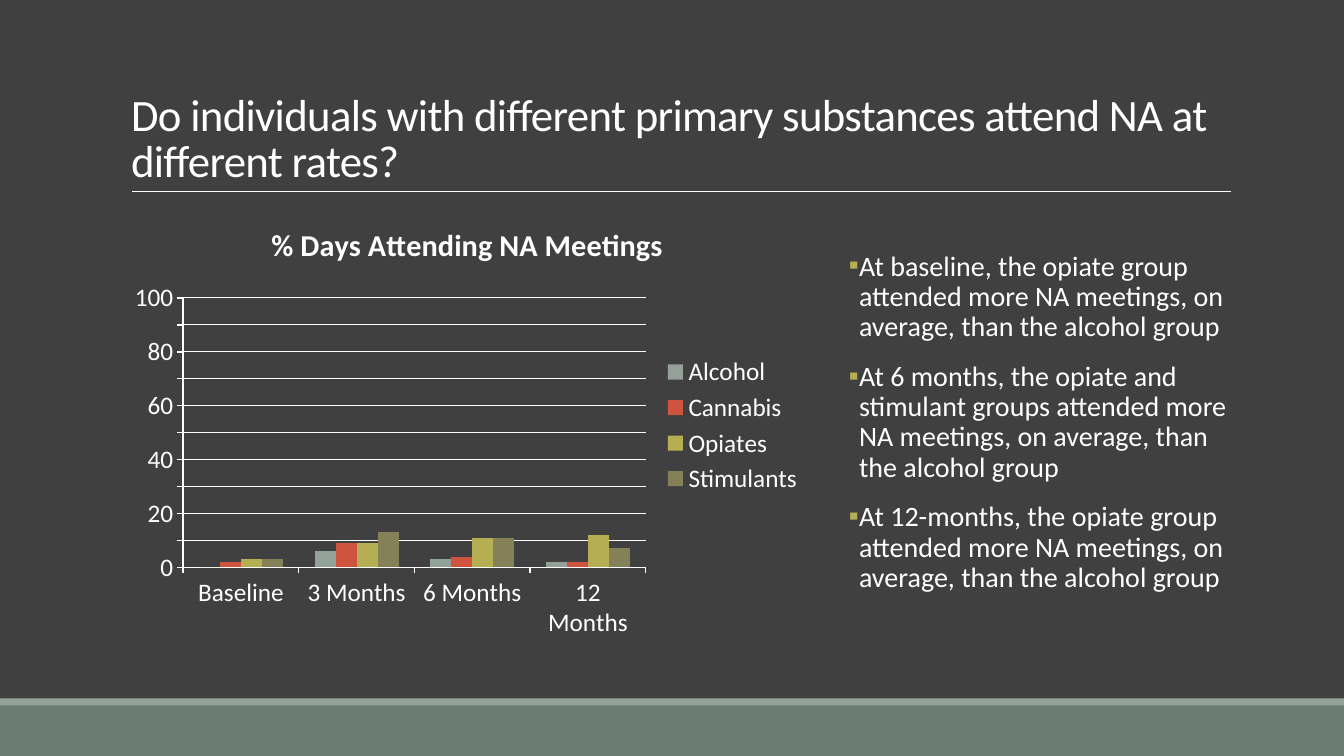
from lxml.etree import SubElement
from pptx import Presentation
from pptx.chart.data import CategoryChartData
from pptx.dml.color import RGBColor
from pptx.enum.chart import XL_CHART_TYPE, XL_LEGEND_POSITION, XL_TICK_MARK
from pptx.enum.shapes import MSO_CONNECTOR, MSO_SHAPE
from pptx.enum.text import MSO_ANCHOR, MSO_AUTO_SIZE, PP_ALIGN
from pptx.oxml.ns import qn
from pptx.util import Inches, Pt

COLORS = {
    "background": "404040",
    "text": "FFFFFF",
    "footer": "6B7D72",
    "bullet": "B5AE53",
    "Alcohol": "93A299",
    "Cannabis": "CF543F",
    "Opiates": "B5AE53",
    "Stimulants": "848058",
}
FONT = "Calibri"
PERIODS = ["Baseline", "3 Months", "6 Months", "12 Months"]
ATTENDANCE = {
    "Alcohol": [0, 6, 3, 2],
    "Cannabis": [2, 9, 4, 2],
    "Opiates": [3, 9, 11, 12],
    "Stimulants": [3, 13, 11, 7],
}
FINDINGS = [
    "At baseline, the opiate group attended more NA meetings, on average, than the alcohol group",
    "At 6 months, the opiate and stimulant groups attended more NA meetings, on average, than the alcohol group",
    "At 12-months, the opiate group attended more NA meetings, on average, than the alcohol group",
]


def color(name):
    """Return the named palette colour."""
    return RGBColor.from_string(COLORS[name])


def style_font(font, size, bold=False):
    """Apply the slide's typeface and text colour."""
    font.name, font.size, font.bold = FONT, Pt(size), bold
    font.color.rgb = color("text")


def write(paragraph, text, size=20, bold=False, line_spacing=None, before=0, after=0, tracking=None):
    """Write formatted text into a paragraph."""
    run = paragraph.add_run()
    run.text = text
    style_font(run.font, size, bold)
    paragraph.alignment = PP_ALIGN.LEFT
    paragraph.line_spacing = line_spacing
    paragraph.space_before, paragraph.space_after = Pt(before), Pt(after)
    if tracking is not None:
        run.font._element.set("spc", str(int(tracking * 100)))


def add_bullet(paragraph, indent):
    """Give a paragraph a coloured square bullet with a hanging indent."""
    properties = paragraph._p.get_or_add_pPr()
    properties.set("marL", str(indent))
    properties.set("indent", str(-indent))
    bullet_color = SubElement(properties, qn("a:buClr"))
    SubElement(bullet_color, qn("a:srgbClr"), val=COLORS["bullet"])
    SubElement(properties, qn("a:buFont"), typeface=FONT)
    SubElement(properties, qn("a:buChar"), char="▪")


def add_footer(slide, left, top, width, height):
    """Draw the footer band with its lighter strip on top."""
    strip_height = Inches(0.07)
    bands = [("footer", top + strip_height, height - strip_height), ("Alcohol", top, strip_height)]
    for fill, band_top, band_height in bands:
        band = slide.shapes.add_shape(MSO_SHAPE.RECTANGLE, left, band_top, width, band_height)
        band.shadow.inherit = False
        band.fill.solid()
        band.fill.fore_color.rgb = color(fill)
        band.line.fill.background()


def add_heading(slide, left, top, width, height):
    """Place the title and the rule beneath it."""
    title = slide.shapes.title
    title.left, title.top, title.width, title.height = left, top, width, height
    frame = title.text_frame
    frame.word_wrap = True
    frame.auto_size = MSO_AUTO_SIZE.NONE
    frame.vertical_anchor = MSO_ANCHOR.BOTTOM
    write(frame.paragraphs[0],
          "Do individuals with different primary substances attend NA at different rates?",
          size=32, line_spacing=0.85, tracking=-0.5)
    bottom = top + height
    rule = slide.shapes.add_connector(
        MSO_CONNECTOR.STRAIGHT, left + Inches(0.11), bottom, left + width + Inches(0.01), bottom)
    rule.line.color.rgb = color("text")
    rule.line.width = Pt(0.5)
    SubElement(rule._element.spPr, qn("a:effectLst"))


def add_attendance_chart(slide, left, top, width, height):
    """Chart meeting attendance by substance and period."""
    data = CategoryChartData()
    data.categories = PERIODS
    for substance, values in ATTENDANCE.items():
        data.add_series(substance, values)
    chart = slide.shapes.add_chart(
        XL_CHART_TYPE.COLUMN_CLUSTERED, left, top, width, height, data).chart
    style_font(chart.font, 18)
    chart.has_title = True
    write(chart.chart_title.text_frame.paragraphs[0], "% Days Attending NA Meetings",
          size=21.6, bold=True)
    chart.chart_title.text_frame.paragraphs[0].alignment = PP_ALIGN.CENTER
    chart.chart_title.include_in_layout = False
    chart.has_legend = True
    chart.legend.position = XL_LEGEND_POSITION.RIGHT
    chart.legend.include_in_layout = False
    plot = chart.plots[0]
    plot.gap_width, plot.overlap = 150, 0
    plot.vary_by_categories = False
    for series in plot.series:
        series.format.fill.solid()
        series.format.fill.fore_color.rgb = color(series.name)
    scale = chart.value_axis
    scale.minimum_scale, scale.maximum_scale, scale.major_unit = 0, 100, 10
    scale.has_major_gridlines = True
    scale.major_gridlines.format.line.color.rgb = color("text")
    scale.major_gridlines.format.line.width = Pt(0.75)
    for axis in (scale, chart.category_axis):
        axis.major_tick_mark = XL_TICK_MARK.OUTSIDE
        axis.format.line.color.rgb = color("text")
        axis.format.line.width = Pt(1)


def add_findings(slide, left, top, width, height):
    """List the findings beside the chart."""
    frame = slide.shapes.add_textbox(left, top, width, height).text_frame
    frame.word_wrap = True
    frame.margin_left = frame.margin_right = 0
    frame.margin_top = frame.margin_bottom = Inches(0.05)
    for index, finding in enumerate(FINDINGS):
        paragraph = frame.add_paragraph() if index else frame.paragraphs[0]
        write(paragraph, finding, line_spacing=0.9, before=12, after=2)
        add_bullet(paragraph, Inches(0.1))


def main():
    """Build and save the slide."""
    deck = Presentation()
    deck.slide_width, deck.slide_height = Inches(13.33), Inches(7.5)
    slide = deck.slides.add_slide(deck.slide_layouts[5])
    slide.background.fill.solid()
    slide.background.fill.fore_color.rgb = color("background")
    add_footer(slide, 0, Inches(6.93), deck.slide_width, Inches(0.57))
    add_heading(slide, Inches(1.2), Inches(0.31), Inches(11), Inches(1.59))
    add_attendance_chart(slide, Inches(1.2), Inches(2.02), Inches(6.87), Inches(4.4))
    add_findings(slide, Inches(8.42), Inches(2.45), Inches(3.78), Inches(3.97))
    deck.save("out.pptx")


if __name__ == "__main__":
    main()
